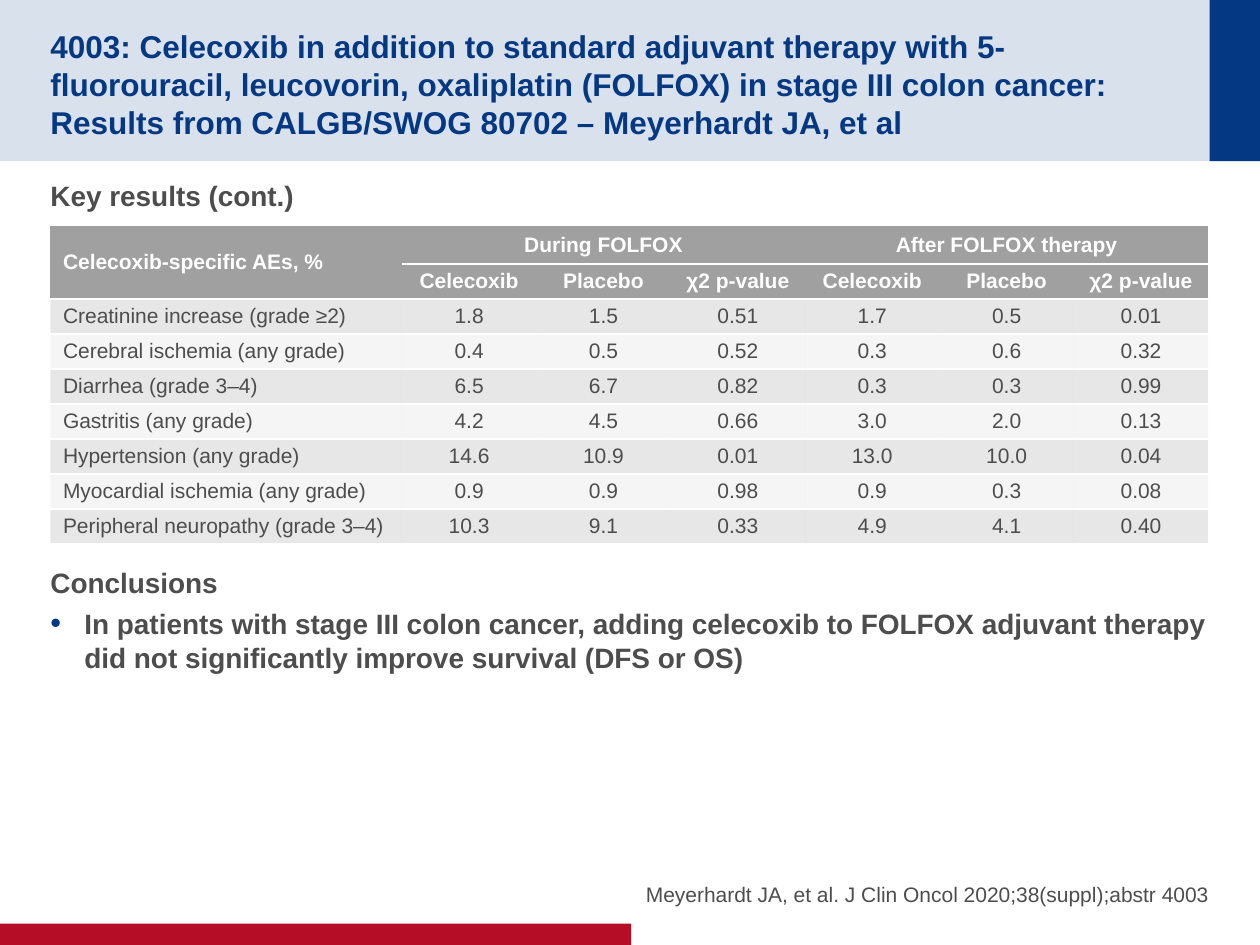
from lxml import etree
from pptx import Presentation
from pptx.dml.color import RGBColor
from pptx.enum.shapes import MSO_SHAPE
from pptx.enum.text import MSO_ANCHOR, MSO_AUTO_SIZE, PP_ALIGN
from pptx.oxml.ns import qn
from pptx.util import Emu, Inches, Pt

RECTANGLE = MSO_SHAPE.RECTANGLE
TOP, MIDDLE, BOTTOM = MSO_ANCHOR.TOP, MSO_ANCHOR.MIDDLE, MSO_ANCHOR.BOTTOM
LEFT, CENTER, RIGHT = PP_ALIGN.LEFT, PP_ALIGN.CENTER, PP_ALIGN.RIGHT
FIXED_SIZE = MSO_AUTO_SIZE.NONE
WIDTH, HEIGHT = Inches(10), Inches(7.5)
TWO_CONTENT = 3
PLAIN_TABLE = "{2D5ABB26-0587-4C30-8999-92F81FD0307C}"
COLORS = {"navy": "043882", "red": "B60D27", "text": "4D4D4D",
          "grey": "A0A0A0", "white": "FFFFFF"}

TITLE = ("4003: Celecoxib in addition to standard adjuvant therapy with "
         "5-fluorouracil, leucovorin, oxaliplatin (FOLFOX) in stage III colon "
         "cancer: Results from CALGB/SWOG 80702 – Meyerhardt JA, et al")
CONCLUSION = ("In patients with stage III colon cancer, adding celecoxib to FOLFOX "
              "adjuvant therapy did not significantly improve survival (DFS or OS)")
CITATION = "Meyerhardt JA, et al. J Clin Oncol 2020;38(suppl);abstr 4003"
MEASURES = ["Celecoxib", "Placebo", "χ2 p-value"]
ADVERSE_EVENTS = [
    ["Celecoxib-specific AEs, %", "During FOLFOX", "", "", "After FOLFOX therapy", "", ""],
    ["", *MEASURES, *MEASURES],
    ["Creatinine increase (grade ≥2)", "1.8", "1.5", "0.51", "1.7", "0.5", "0.01"],
    ["Cerebral ischemia (any grade)", "0.4", "0.5", "0.52", "0.3", "0.6", "0.32"],
    ["Diarrhea (grade 3–4)", "6.5", "6.7", "0.82", "0.3", "0.3", "0.99"],
    ["Gastritis (any grade)", "4.2", "4.5", "0.66", "3.0", "2.0", "0.13"],
    ["Hypertension (any grade)", "14.6", "10.9", "0.01", "13.0", "10.0", "0.04"],
    ["Myocardial ischemia (any grade)", "0.9", "0.9", "0.98", "0.9", "0.3", "0.08"],
    ["Peripheral neuropathy (grade 3–4)", "10.3", "9.1", "0.33", "4.9", "4.1", "0.40"],
]
HEADER_ROWS = 2


def share(left, top, width, height):
    """Turn percentages of the slide into a box of lengths."""
    return [Emu(int(size * percent / 100)) for size, percent in
            zip((WIDTH, HEIGHT, WIDTH, HEIGHT), (left, top, width, height))]


def apply_format(target, values):
    for name, value in values.items():
        setattr(target, name, value)


def paint(fill, color):
    fill.solid()
    fill.fore_color.rgb = RGBColor.from_string(COLORS[color])


def fade(element, percent):
    """Make the solid fill directly under the element translucent."""
    color = element.find(qn("a:solidFill")).find(qn("a:srgbClr"))
    etree.SubElement(color, qn("a:alpha"), val=str(percent * 1000))


def write(para, text, size, color="text", bold=False, **layout):
    span = para.add_run()
    span.text = text
    apply_format(span.font, {"name": "Arial", "size": Pt(size), "bold": bold})
    span.font.color.rgb = RGBColor.from_string(COLORS[color])
    apply_format(para, {"alignment": LEFT, "space_before": Pt(0), **layout})


def set_bullet(para, symbol=None):
    props = para._p.get_or_add_pPr()
    indent = Inches(0.27) if symbol else 0
    props.set("marL", str(indent))
    props.set("indent", str(-indent))
    if not symbol:
        etree.SubElement(props, qn("a:buNone"))
        return
    color = etree.SubElement(props, qn("a:buClr"))
    etree.SubElement(color, qn("a:srgbClr"), val=COLORS["navy"])
    etree.SubElement(props, qn("a:buSzPct"), val="110000")
    etree.SubElement(props, qn("a:buFont"), typeface="Arial")
    etree.SubElement(props, qn("a:buChar"), char=symbol)


def prepare_frame(holder, box, anchor, top=0.0, bottom=0.0):
    """Place a placeholder and return its formatted text frame."""
    apply_format(holder, dict(zip(("left", "top", "width", "height"), box)))
    frame = holder.text_frame
    apply_format(frame, {"word_wrap": True, "auto_size": FIXED_SIZE,
                         "vertical_anchor": anchor, "margin_left": 0, "margin_right": 0,
                         "margin_top": Inches(top), "margin_bottom": Inches(bottom)})
    return frame


def add_bar(page, box, color, layer, opacity=100):
    bar = page.shapes.add_shape(RECTANGLE, *box)
    bar.shadow.inherit = False
    bar.line.fill.background()
    paint(bar.fill, color)
    if opacity < 100:
        fade(bar._element.spPr, opacity)
    page.shapes._spTree.insert(2 + layer, bar._element)


def add_background(page):
    add_bar(page, share(0, 0, 100, 17.07), "navy", 0, opacity=15)
    add_bar(page, share(96, 0, 4, 17.07), "navy", 1)
    add_bar(page, share(0, 97.73, 50.1, 2.27), "red", 2)


def fill_title(page, box):
    frame = prepare_frame(page.shapes.title, box, MIDDLE, top=0.05)
    write(frame.paragraphs[0], TITLE, 18, "navy", bold=True)


def fill_body(page, box):
    frame = prepare_frame(page.placeholders[1], box, TOP, top=0.05, bottom=0.05)
    lines = [("Key results (cont.)", 0, None), ("Conclusions", 198, None),
             (CONCLUSION, 0, "•")]
    for index, (text, gap, symbol) in enumerate(lines):
        para = frame.add_paragraph() if index else frame.paragraphs[0]
        write(para, text, 16, bold=True, space_before=Pt(gap), space_after=Pt(4))
        set_bullet(para, symbol)


def fill_citation(page, box):
    para = prepare_frame(page.placeholders[2], box, BOTTOM).paragraphs[0]
    write(para, CITATION, 12, alignment=RIGHT, space_after=Pt(4))
    set_bullet(para)


def add_rules(cell, sides):
    """Draw white horizontal rules; they must precede the cell's fill."""
    for index, side in enumerate(sides):
        line = etree.Element(qn(f"a:{side}"), w=str(Pt(1)))
        solid = etree.SubElement(line, qn("a:solidFill"))
        etree.SubElement(solid, qn("a:srgbClr"), val=COLORS["white"])
        cell._tc.tcPr.insert(index, line)


def fill_cell(cell, text, row, column):
    header = row < HEADER_ROWS
    apply_format(cell, {"vertical_anchor": MIDDLE,
                        "margin_left": Inches(0.1), "margin_right": Inches(0.1),
                        "margin_top": Inches(0.04), "margin_bottom": Inches(0.04)})
    paint(cell.fill, "grey")
    if not header:
        fade(cell._tc.tcPr, 10 if row % 2 else 25)
    add_rules(cell, ["lnB"] if row else ["lnT", "lnB"])
    if text:
        write(cell.text_frame.paragraphs[0], text, 12, "white" if header else "text",
              bold=header, alignment=CENTER if column else LEFT)


def add_events_table(page, box):
    row_count, column_count = len(ADVERSE_EVENTS), len(ADVERSE_EVENTS[0])
    frame = page.shapes.add_table(row_count, column_count, *box)
    table = frame.table
    apply_format(table, {"first_row": False, "horz_banding": False})
    table._tbl.tblPr.find(qn("a:tableStyleId")).text = PLAIN_TABLE
    width, height = box[2:]
    label_width, top_height = int(width * 0.3036), int(height * 0.12)
    for index, column in enumerate(table.columns):
        column.width = (width - label_width) // (column_count - 1) if index else label_width
    for index, row in enumerate(table.rows):
        row.height = (height - top_height) // (row_count - 1) if index else top_height
    for row, texts in enumerate(ADVERSE_EVENTS):
        for column, text in enumerate(texts):
            fill_cell(table.cell(row, column), text, row, column)
    table.cell(0, 0).merge(table.cell(1, 0))
    for start in (1, 4):
        table.cell(0, start).merge(table.cell(0, start + len(MEASURES) - 1))


def main():
    deck = Presentation()
    apply_format(deck, {"slide_width": WIDTH, "slide_height": HEIGHT})
    page = deck.slides.add_slide(deck.slide_layouts[TWO_CONTENT])
    add_background(page)
    fill_title(page, share(4, 2.67, 90.1, 11.73))
    fill_body(page, share(4, 18.27, 92, 69.2))
    fill_citation(page, share(50.8, 88.93, 45.2, 7.07))
    add_events_table(page, share(4, 23.87, 91.9, 33.73))
    deck.save("out.pptx")


if __name__ == "__main__":
    main()
